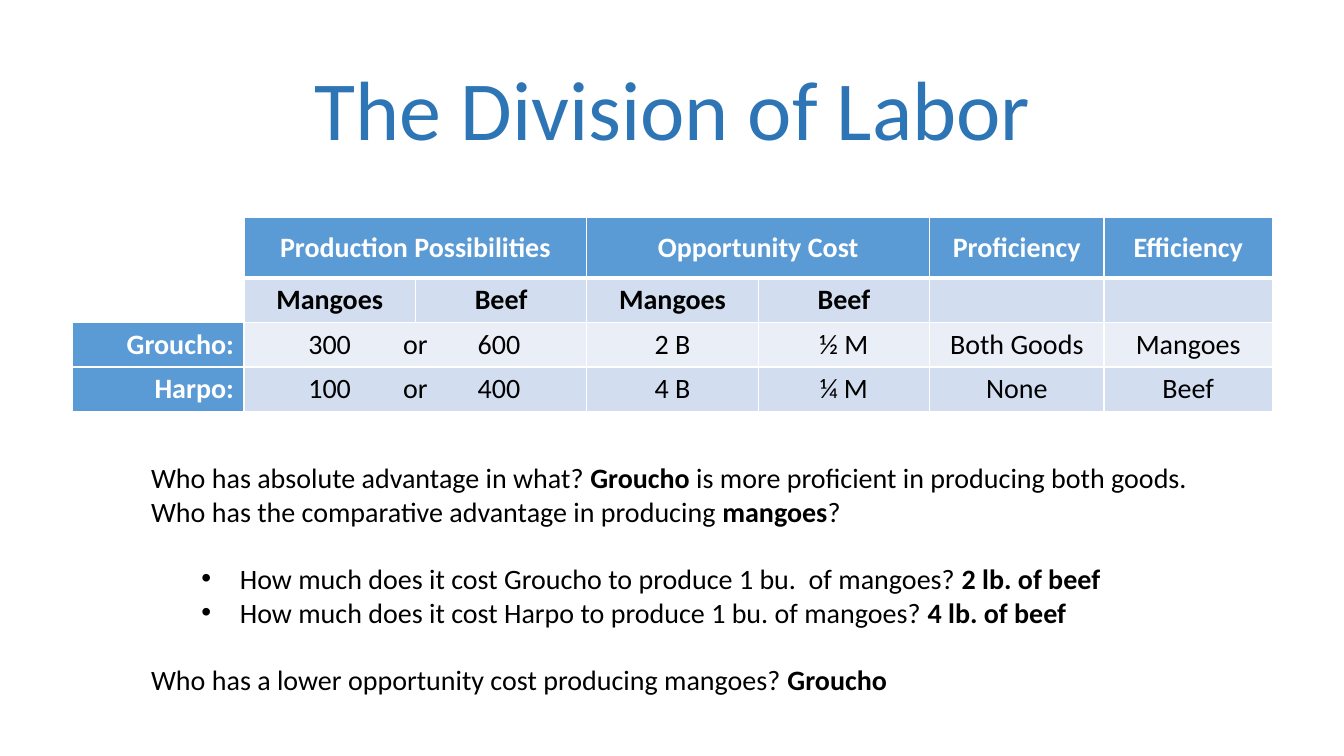
from lxml import etree
from pptx import Presentation
from pptx.dml.color import RGBColor
from pptx.enum import text
from pptx.oxml import ns
from pptx.util import Inches, Pt

WHITE = RGBColor(0xFF, 0xFF, 0xFF)
BLACK = RGBColor(0, 0, 0)
NAVY = RGBColor(0x2E, 0x75, 0xB6)
BLUE = RGBColor(0x5B, 0x9B, 0xD5)
MID = RGBColor(0xD2, 0xDE, 0xEF)
PALE = RGBColor(0xEA, 0xEF, 0xF7)
ALIGN = text.PP_ALIGN
MIDDLE = text.MSO_ANCHOR.MIDDLE

COLS = [1.7] * 5 + [1.73, 1.67]
ROWS = [0.6] + [0.44] * 3
CELLS = [
    ["", "Production Possibilities", "", "Opportunity Cost", "", "Proficiency", "Efficiency"],
    ["", "Mangoes", "Beef", "Mangoes", "Beef", "", ""],
    ["Groucho:", "\t300\tor\t600", "", "2 B", "½ M", "Both Goods", "Mangoes"],
    ["Harpo:", "\t100\tor\t400", "", "4 B", "¼ M", "None", "Beef"],
]
SPANS = [(0, 1), (0, 3), (2, 1), (3, 1)]
TABS = [0.78, 1.63, 2.46]
FILLS = [BLUE, MID, PALE, MID]

LINES = [
    ("", 0, ["Who has absolute advantage in what? ", "Groucho",
             " is more proficient in producing both goods."]),
    ("", 0, ["Who has the comparative advantage in producing ", "mangoes", "?"]),
    ("•", 24, ["How much does it cost Groucho to produce 1 bu.  of mangoes? ", "2 lb. of beef"]),
    ("•", 0, ["How much does it cost Harpo to produce 1 bu. of mangoes? ", "4 lb. of beef"]),
    ("", 24, ["Who has a lower opportunity cost producing mangoes? ", "Groucho"]),
]


def add(parent, tag, **attrs):
    """Append an XML child to a parent and return it."""
    return etree.SubElement(parent, ns.qn(tag), attrs)


def put(para, words, size, color, bold=False):
    """Add a formatted run to a paragraph."""
    run = para.add_run()
    run.text = words
    look = {"name": "Calibri", "size": Pt(size), "bold": bold}
    for key, value in look.items():
        setattr(run.font, key, value)
    run.font.color.rgb = color


def edge(cell, base):
    """Give a cell white borders, with the given bottom width."""
    props = cell._tc.get_or_add_tcPr()
    for side, width in {"L": 1, "R": 1, "T": 1, "B": base}.items():
        line = add(props, f"a:ln{side}", w=str(Pt(width)))
        add(add(line, "a:solidFill"), "a:srgbClr", val=str(WHITE))


def title(slide, left, top, width, height):
    """Place the slide title in its box."""
    head = slide.shapes.title
    box = {"left": left, "top": top, "width": width, "height": height}
    for key, value in box.items():
        setattr(head, key, Inches(value))
    head.fill.solid()
    head.fill.fore_color.rgb = WHITE
    frame = head.text_frame
    frame.auto_size = text.MSO_AUTO_SIZE.NONE
    frame.vertical_anchor = MIDDLE
    para = frame.paragraphs[0]
    para.alignment = ALIGN.CENTER
    para.line_spacing = 0.9
    put(para, "The Division of Labor", 60, NAVY)


def fill(cell, row, col, words):
    """Format one table cell and write its words."""
    edge(cell, 3 if row == 0 else 1)
    label, data = col == 0, row > 1 and col > 0
    blank = label and row < 2
    tint = WHITE if blank else BLUE if label else FILLS[row]
    cell.fill.solid()
    cell.fill.fore_color.rgb = tint
    if row != 1:
        cell.vertical_anchor = MIDDLE
    if data:
        sides = {"left": 0.07, "top": 0, "right": 0.07, "bottom": 0}
        for side, value in sides.items():
            setattr(cell, f"margin_{side}", Inches(value))
    if not words:
        return
    para = cell.text_frame.paragraphs[0]
    para.alignment = ALIGN.RIGHT if label else ALIGN.CENTER
    if "\t" in words:
        para.alignment = ALIGN.LEFT
        stops = add(para._p.get_or_add_pPr(), "a:tabLst")
        for stop in TABS:
            add(stops, "a:tab", pos=str(Inches(stop)), algn="ctr")
    put(para, words, 20, WHITE if tint == BLUE else BLACK, not data)


def grid(slide, left, top):
    """Build the table of outputs and costs at a corner."""
    size = [Inches(v) for v in (left, top, sum(COLS), sum(ROWS))]
    table = slide.shapes.add_table(len(ROWS), len(COLS), *size).table
    for col, width in zip(table.columns, COLS):
        col.width = Inches(width)
    for row, height in zip(table.rows, ROWS):
        row.height = Inches(height)
    for row, col in SPANS:
        table.cell(row, col).merge(table.cell(row, col + 1))
    for row, line in enumerate(CELLS):
        for col, words in enumerate(line):
            fill(table.cell(row, col), row, col, words)


def notes(slide, left, top, width, height):
    """Write the questions and answers in a text box."""
    box = slide.shapes.add_textbox(*map(Inches, (left, top, width, height)))
    frame = box.text_frame
    frame.word_wrap = True
    frame.auto_size = text.MSO_AUTO_SIZE.SHAPE_TO_FIT_TEXT
    for num, (mark, gap, parts) in enumerate(LINES):
        para = frame.add_paragraph() if num else frame.paragraphs[0]
        para.space_before = Pt(gap)
        if mark:
            para.level = 1
            props = para._p.get_or_add_pPr()
            props.set("marL", str(Inches(0.88)))
            props.set("indent", str(Inches(-0.38)))
            add(props, "a:buFont", typeface="Arial")
            add(props, "a:buChar", char=mark)
        for spot, words in enumerate(parts):
            put(para, words, 20, BLACK, spot == 1)


def main():
    """Build and save the slide."""
    deck = Presentation()
    deck.slide_width, deck.slide_height = Inches(13.33), Inches(7.5)
    slide = deck.slides.add_slide(deck.slide_layouts[5])
    title(slide, 0.92, 0.4, 11.5, 1.45)
    grid(slide, 0.72, 2.16)
    notes(slide, 1.4, 4.52, 10.55, 2.46)
    deck.save("out.pptx")


if __name__ == "__main__":
    main()
